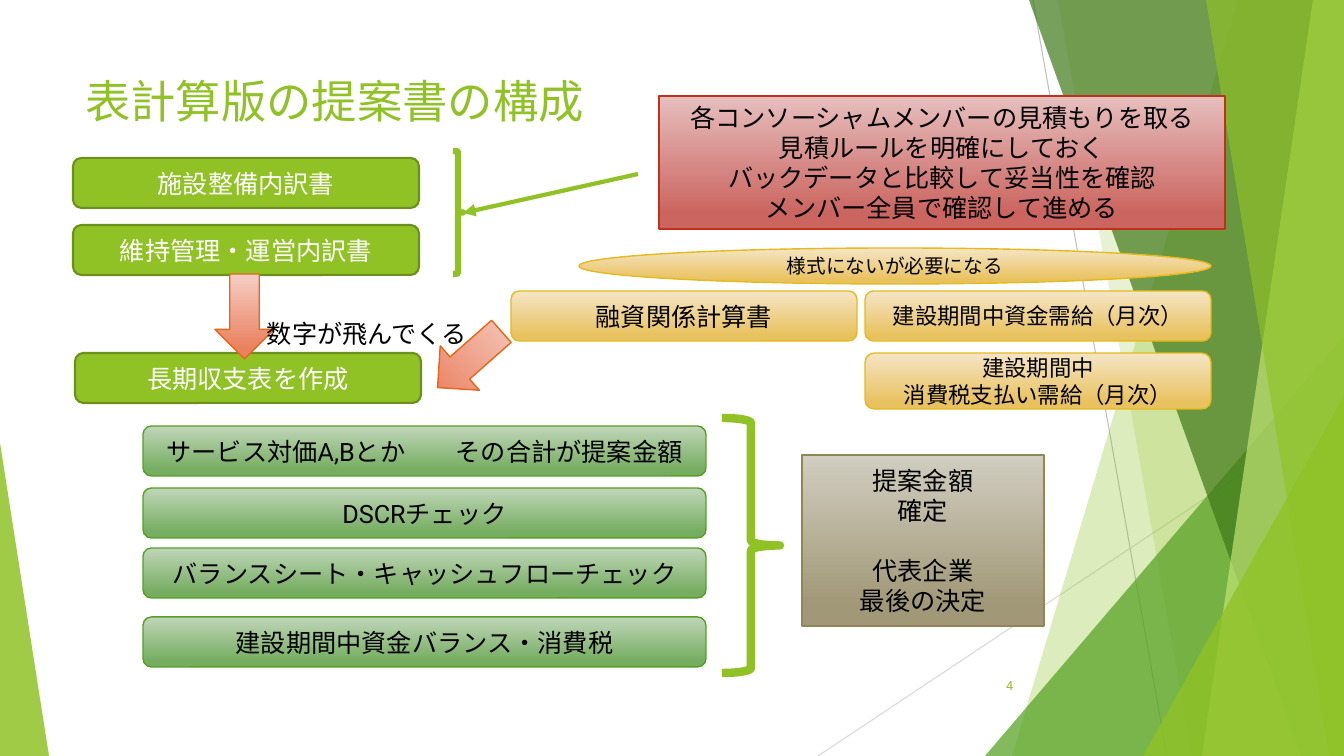
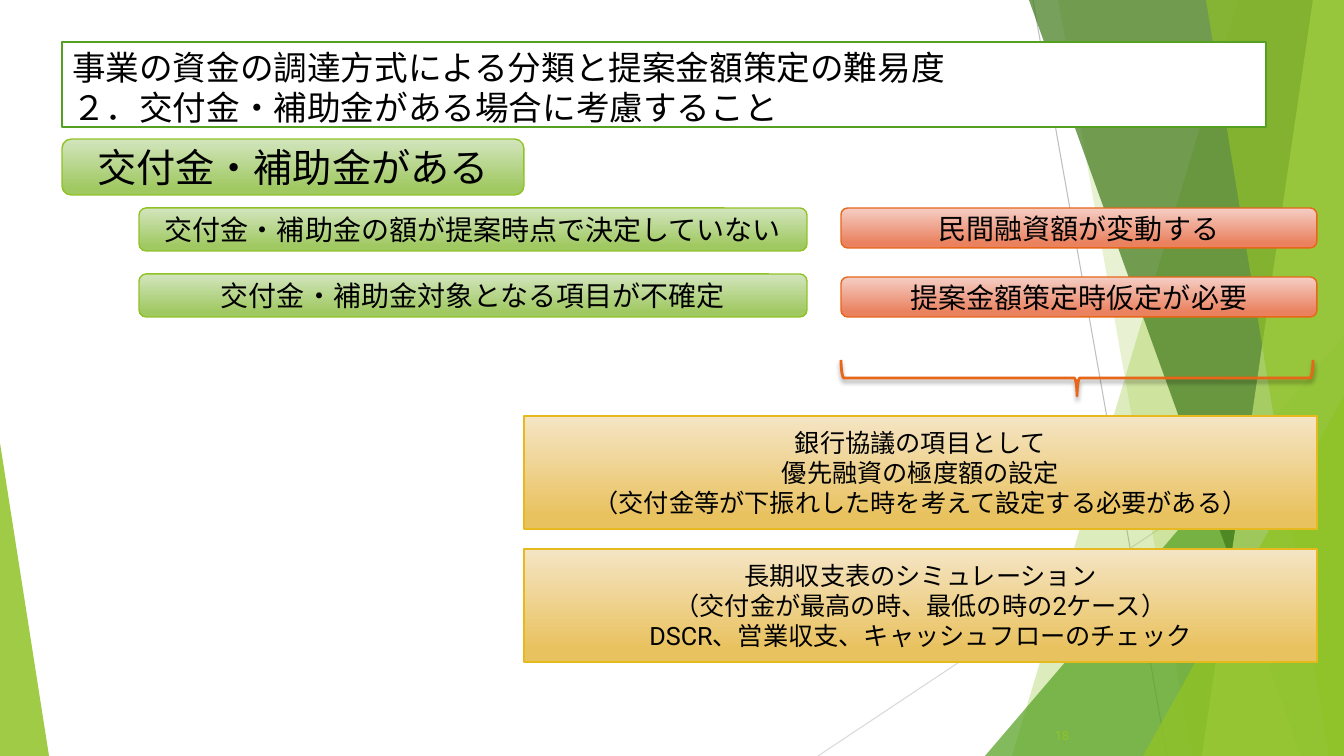
from dataclasses import dataclass

from lxml.etree import SubElement
from pptx import Presentation
from pptx.dml.color import RGBColor
from pptx.enum.shapes import MSO_CONNECTOR, MSO_SHAPE
from pptx.enum.text import MSO_ANCHOR, MSO_AUTO_SIZE, PP_ALIGN
from pptx.oxml.ns import qn
from pptx.util import Emu, Pt

SLIDE_W, SLIDE_H = 1344, 756
EMU_PER_PX = 12192000 / SLIDE_W
WIDE_SPACE = "　"


@dataclass(frozen=True)
class Paint:
    """Fill (a vertical gradient when end is given) and outline."""
    start: str
    line: str
    end: str = ""
    width: float = 1


@dataclass(frozen=True)
class Theme:
    font: str = "Roboto"
    white: str = "FFFFFF"
    black: str = "000000"
    lime: str = "90C226"
    pale_lime: str = "C0E474"
    green: str = "54A021"
    dark_green: str = "3F7819"
    orange: str = "E76618"
    grey: str = "BFBFBF"
    light_grey: str = "D9D9D9"
    document: Paint = Paint("90C226", "6B901C", width=1.5)
    title_box: Paint = Paint("FFFFFF", "54A021", width=1.5)
    flow: Paint = Paint("F5CEC5", "E76618", "EA815F")
    finance: Paint = Paint("F5E5C5", "E6B91E", "E9C260")
    check: Paint = Paint("C0D6B9", "54A021", "76AD61")
    decision: Paint = Paint("D1CDC0", "918655", "A19877")
    advice: Paint = Paint("E6BFBE", "C42F1A", "CB6560")
    subsidy: Paint = Paint("D3E5BE", "90C226", "A0C962")
    title_size: float = 32.4
    long_title_size: float = 24
    heading_size: float = 28
    point_size: float = 20
    body_size: float = 18
    small_size: float = 16
    note_size: float = 14
    number_size: float = 9


THEME = Theme()


def px(length):
    return Emu(round(length * EMU_PER_PX))


def rgb(color):
    return RGBColor.from_string(color)


def set_opacity(shape, percent):
    color = shape.element.spPr.find(qn("a:solidFill"))[0]
    SubElement(color, qn("a:alpha"), val=str(percent * 1000))


def apply_paint(shape, paint):
    if paint.end:
        shape.fill.gradient()
        shape.fill.gradient_angle = 270
        first, last = shape.fill.gradient_stops
        first.color.rgb = rgb(paint.start)
        last.color.rgb = rgb(paint.end)
        last.position = 0.88
    else:
        shape.fill.solid()
        shape.fill.fore_color.rgb = rgb(paint.start)
    shape.line.color.rgb = rgb(paint.line)
    shape.line.width = Pt(paint.width)


def add_run(paragraph, text, size, color):
    run = paragraph.add_run()
    run.text = text
    run.font.size = Pt(size)
    run.font.color.rgb = rgb(color)
    run.font.name = THEME.font
    props = run._r.get_or_add_rPr()
    SubElement(props, qn("a:ea"), typeface=THEME.font)
    if text == WIDE_SPACE:
        props.set("spc", str(round(size * 100)))


def write_lines(frame, lines, size, color, align, gap_before=None):
    """Write one paragraph a line; gap_before is the line that opens a new group."""
    frame.word_wrap = True
    for index, line in enumerate(lines):
        paragraph = frame.paragraphs[0] if index == 0 else frame.add_paragraph()
        paragraph.alignment = align
        if index == gap_before:
            paragraph.space_before = Pt(size * 1.17)
        for piece in line.partition(WIDE_SPACE):
            if piece:
                add_run(paragraph, piece, size, color)


def add_box(slide, area, paint, *lines, size=THEME.body_size, color=THEME.black,
            kind=MSO_SHAPE.ROUNDED_RECTANGLE, gap_before=None):
    box = slide.shapes.add_shape(kind, *map(px, area))
    box.shadow.inherit = False
    apply_paint(box, paint)
    box.text_frame.vertical_anchor = MSO_ANCHOR.MIDDLE
    write_lines(box.text_frame, lines, size, color, PP_ALIGN.CENTER, gap_before)


def add_label(slide, area, text, size, color, align=PP_ALIGN.LEFT, anchor=MSO_ANCHOR.TOP):
    frame = slide.shapes.add_textbox(*map(px, area)).text_frame
    frame.vertical_anchor = anchor
    write_lines(frame, [text], size, color, align)


def add_page_number(slide, left, top, number):
    add_label(slide, (left, top, 76, 40), number, THEME.number_size, THEME.lime,
              PP_ALIGN.RIGHT, MSO_ANCHOR.MIDDLE)


def add_flow_arrow(slide, left, top, rotation=0):
    arrow = slide.shapes.add_shape(MSO_SHAPE.DOWN_ARROW, *map(px, (left, top, 59, 85)))
    arrow.shadow.inherit = False
    apply_paint(arrow, THEME.flow)
    arrow.rotation = rotation


def add_brace(slide, area, color, width, rotation=0):
    brace = slide.shapes.add_shape(MSO_SHAPE.RIGHT_BRACE, *map(px, area))
    brace.shadow.inherit = False
    brace.fill.background()
    brace.line.color.rgb = rgb(color)
    brace.line.width = Pt(width)
    brace.rotation = rotation
    return brace


def add_soft_shadow(shape):
    effects = shape.element.spPr.find(qn("a:effectLst"))
    shadow = SubElement(effects, qn("a:outerShdw"), blurRad=str(Pt(3)), dist=str(Pt(2)),
                        dir="5400000", rotWithShape="0")
    color = SubElement(shadow, qn("a:srgbClr"), val=THEME.black)
    SubElement(color, qn("a:alpha"), val="35000")


def add_line(shapes, start, end, color, width, arrow=False):
    line = shapes.add_connector(MSO_CONNECTOR.STRAIGHT, *map(px, start + end))
    line.line.color.rgb = rgb(color)
    line.line.width = Pt(width)
    properties = line.element.spPr
    if arrow:
        SubElement(properties.find(qn("a:ln")), qn("a:tailEnd"), type="triangle")
    SubElement(properties, qn("a:effectLst"))


def finish_facet(facet, color, opacity):
    facet.shadow.inherit = False
    facet.fill.solid()
    facet.fill.fore_color.rgb = rgb(color)
    set_opacity(facet, opacity)
    facet.line.fill.background()


def add_band(shapes, top_x, bottom_x, color, opacity):
    """Fill from a slanted edge to the right side of the slide."""
    outline = shapes.build_freeform(top_x, 0, scale=EMU_PER_PX)
    outline.add_line_segments([(SLIDE_W, 0), (SLIDE_W, SLIDE_H), (bottom_x, SLIDE_H)])
    finish_facet(outline.convert_to_shape(), color, opacity)


def add_corner(shapes, left, top, width, apex, color, opacity):
    """Stand a triangle on the bottom edge of the slide."""
    area = (left, top, width, SLIDE_H - top)
    corner = shapes.add_shape(MSO_SHAPE.ISOSCELES_TRIANGLE, *map(px, area))
    corner.adjustments[0] = apex
    finish_facet(corner, color, opacity)


def add_backdrop(slide):
    """Draw the facets and hand them to the layout that all slides share."""
    group = slide.shapes.add_group_shape()
    shapes = group.shapes
    add_line(shapes, (1033, 0), (1167, SLIDE_H), THEME.grey, 0.75)
    add_line(shapes, (SLIDE_W, 406), (818, SLIDE_H), THEME.light_grey, 0.75)
    add_band(shapes, 1238, 1012, THEME.lime, 30)
    add_band(shapes, 1058, 1192, THEME.lime, 20)
    add_corner(shapes, 985, 336, 359, 1, THEME.green, 72)
    add_band(shapes, 1029, 1301, THEME.dark_green, 70)
    add_band(shapes, 1313, 1202, THEME.pale_lime, 70)
    add_band(shapes, 1206, 1329, THEME.lime, 65)
    add_corner(shapes, 1143, 396, 201, 1, THEME.lime, 80)
    add_corner(shapes, 0, 443, 49, 0, THEME.lime, 85)
    for number, properties in enumerate(group.element.iter(qn("p:cNvPr")), 100):
        properties.set("id", str(number))
    slide.slide_layout.shapes.element.append(group.element)


def set_title(slide, area, lines, size, color):
    title = slide.shapes.title
    title.left, title.top, title.width, title.height = map(px, area)
    frame = title.text_frame
    frame.auto_size = MSO_AUTO_SIZE.NONE
    frame.vertical_anchor = MSO_ANCHOR.TOP
    paragraph = frame.paragraphs[0]
    paragraph.alignment = PP_ALIGN.LEFT
    for index, line in enumerate(lines):
        if index:
            paragraph.add_line_break()
        add_run(paragraph, line, size, color)
    return title


def build_structure_slide(slide):
    set_title(slide, (75, 68, 1116, 59), ["表計算版の提案書の構成"],
              THEME.title_size, THEME.lime)
    add_page_number(slide, 947, 666, "4")
    for left, top, name in ((73, 158, "施設整備内訳書"), (73, 225, "維持管理・運営内訳書"),
                            (75, 353, "長期収支表を作成")):
        add_box(slide, (left, top, 346, 50), THEME.document, name, color=THEME.white)
    add_flow_arrow(slide, 215, 274)
    add_box(slide, (511, 291, 346, 50), THEME.finance, "融資関係計算書")
    add_box(slide, (579, 248, 632, 36), THEME.finance, "様式にないが必要になる",
            size=THEME.note_size, kind=MSO_SHAPE.OVAL)
    add_flow_arrow(slide, 440, 317, 48.6)
    add_label(slide, (257, 313, 237, 40), "数字が飛んでくる", THEME.body_size, THEME.black)

    for top, check in ((426, "サービス対価A,Bとか　その合計が提案金額"),
                       (488, "DSCRチェック"),
                       (548, "バランスシート・キャッシュフローチェック"),
                       (617, "建設期間中資金バランス・消費税")):
        add_box(slide, (143, top, 563, 50), THEME.check, check)
    add_brace(slide, (722, 418, 58, 255), THEME.lime, 6)
    add_box(slide, (802, 455, 242, 171), THEME.decision,
            "提案金額", "確定", "代表企業", "最後の決定",
            kind=MSO_SHAPE.RECTANGLE, gap_before=2)

    add_box(slide, (865, 291, 346, 50), THEME.finance, "建設期間中資金需給（月次）",
            size=THEME.small_size)
    add_box(slide, (865, 353, 346, 56), THEME.finance,
            "建設期間中", "消費税支払い需給（月次）", size=THEME.small_size)
    add_brace(slide, (453, 151, 10, 123), THEME.lime, 4.5)
    add_line(slide.shapes, (638, 174), (463, 213), THEME.lime, 3, arrow=True)
    add_box(slide, (659, 96, 566, 133), THEME.advice,
            "各コンソーシャムメンバーの見積もりを取る", "見積ルールを明確にしておく",
            "バックデータと比較して妥当性を確認", "メンバー全員で確認して進める",
            kind=MSO_SHAPE.RECTANGLE)


def build_subsidy_slide(slide):
    title = set_title(slide, (62, 42, 1204, 85),
                      ["事業の資金の調達方式による分類と提案金額策定の難易度",
                       "２．交付金・補助金がある場合に考慮すること"],
                      THEME.long_title_size, THEME.black)
    apply_paint(title, THEME.title_box)
    add_page_number(slide, 1003, 715, "18")
    add_box(slide, (62, 139, 462, 56), THEME.subsidy, "交付金・補助金がある",
            size=THEME.heading_size)
    for top, cause in ((208, "交付金・補助金の額が提案時点で決定していない"),
                       (274, "交付金・補助金対象となる項目が不確定")):
        add_box(slide, (139, top, 668, 43), THEME.subsidy, cause, size=THEME.point_size)
    for top, effect in ((208, "民間融資額が変動する"), (277, "提案金額策定時仮定が必要")):
        add_box(slide, (841, top, 476, 40), THEME.flow, effect, size=THEME.point_size)
    add_soft_shadow(add_brace(slide, (1059, 142, 36, 472), THEME.orange, 2, 90))
    for top, measures in (
            (416, ("銀行協議の項目として", "優先融資の極度額の設定",
                   "（交付金等が下振れした時を考えて設定する必要がある）")),
            (549, ("長期収支表のシミュレーション",
                   "（交付金が最高の時、最低の時の2ケース）",
                   "DSCR、営業収支、キャッシュフローのチェック"))):
        add_box(slide, (524, top, 793, 113), THEME.finance, *measures,
                kind=MSO_SHAPE.RECTANGLE)


def main():
    deck = Presentation()
    deck.slide_width, deck.slide_height = px(SLIDE_W), px(SLIDE_H)
    title_only = deck.slide_layouts[5]
    structure = deck.slides.add_slide(title_only)
    add_backdrop(structure)
    build_structure_slide(structure)
    build_subsidy_slide(deck.slides.add_slide(title_only))
    deck.save("out.pptx")


if __name__ == "__main__":
    main()
